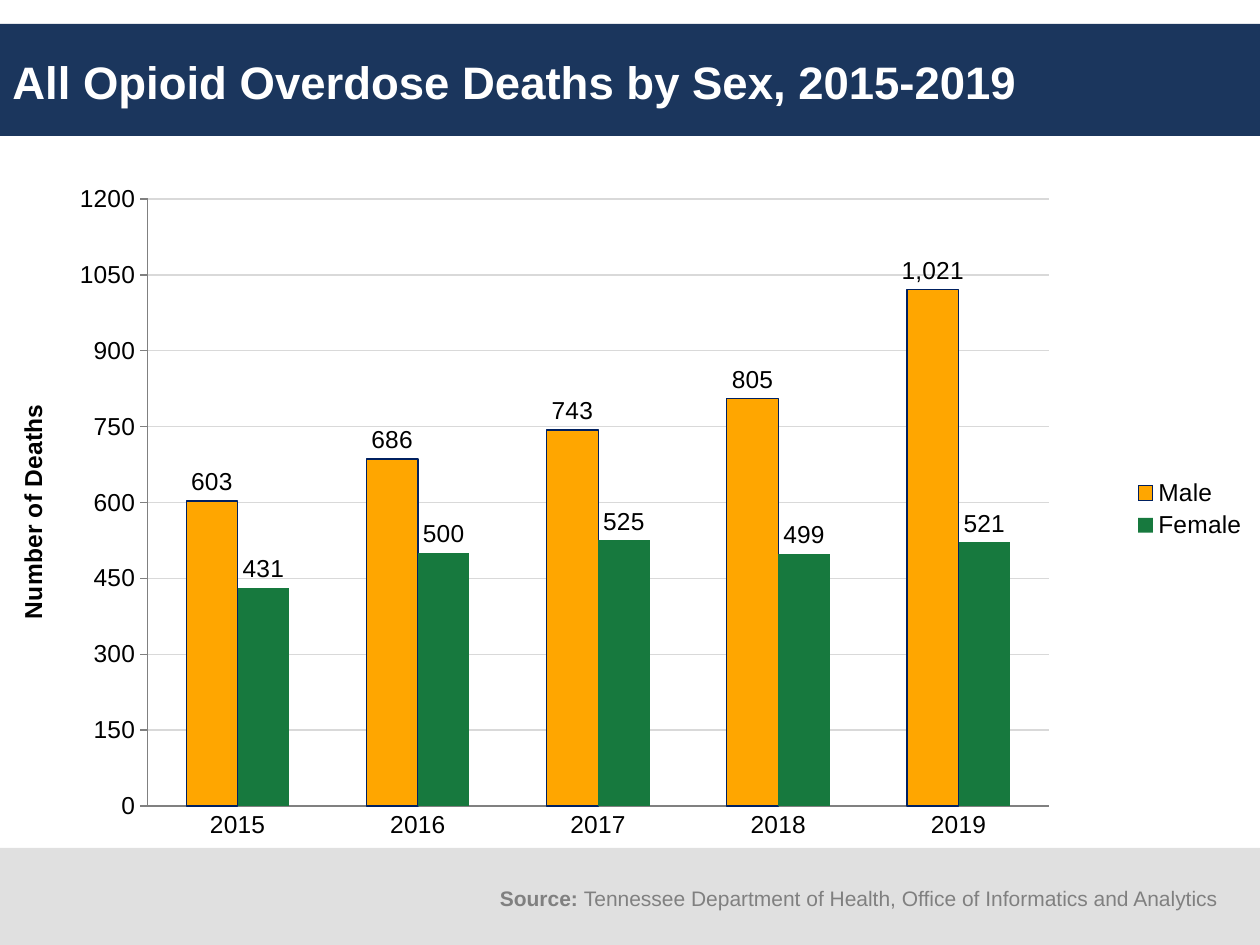
from dataclasses import dataclass

from lxml import etree
from pptx import Presentation
from pptx import util as u
from pptx.chart.data import CategoryChartData
from pptx.dml.color import RGBColor
from pptx.enum import chart as ch, shapes, text
from pptx.oxml.ns import qn


@dataclass(frozen=True)
class Theme:
    font: str = "Arial"
    navy: str = "1B365D"
    footer: str = "E0E0E0"
    white: str = "FFFFFF"
    black: str = "000000"
    muted: str = "808080"
    grid: str = "D9D9D9"
    male: str = "FFA600"
    male_outline: str = "002060"
    female: str = "17793E"
    title_size: int = 26
    chart_size: int = 14
    source_size: int = 12
    line_width: float = 0.75


class SlideBuilder:
    def __init__(self, slide, theme):
        self.slide = slide
        self.theme = theme

    def style(self, font, size, color, bold=False):
        font.name = self.theme.font
        font.size = u.Pt(size)
        font.bold = bold
        font.color.rgb = RGBColor.from_string(color)

    def outline(self, line, color):
        line.color.rgb = RGBColor.from_string(color)
        line.width = u.Pt(self.theme.line_width)

    def band(self, top, height, color):
        band = self.slide.shapes.add_shape(
            shapes.MSO_SHAPE.RECTANGLE, 0, u.Pt(top), u.Pt(720), u.Pt(height))
        band.shadow.inherit = False
        band.fill.solid()
        band.fill.fore_color.rgb = RGBColor.from_string(color)
        band.line.fill.background()

    def label(self, box, runs, size, color, anchor=text.MSO_ANCHOR.TOP):
        frame = self.slide.shapes.add_textbox(*map(u.Pt, box)).text_frame
        frame.word_wrap = True
        frame.vertical_anchor = anchor
        paragraph = frame.paragraphs[0]
        self.style(paragraph.font, size, color)
        for wording, bold in runs:
            run = paragraph.add_run()
            run.text = wording
            run.font.bold = bold

    def column_chart(self, box, years, series, axis_title, plot_box):
        theme = self.theme
        data = CategoryChartData()
        data.categories = years
        for name, deaths, *_ in series:
            data.add_series(name, deaths)
        chart = self.slide.shapes.add_chart(
            ch.XL_CHART_TYPE.COLUMN_CLUSTERED, *map(u.Pt, box), data).chart
        self.style(chart.font, theme.chart_size, theme.black)
        chart.has_title = False
        chart.has_legend = True
        chart.legend.position = ch.XL_LEGEND_POSITION.RIGHT
        chart.legend.include_in_layout = False
        self.style(chart.legend.font, theme.chart_size, theme.black)

        plot = chart.plots[0]
        plot.vary_by_categories = False
        plot.gap_width = 150
        plot.overlap = 0
        for columns, (_, _, color, border, number_format) in zip(plot.series, series):
            columns.format.fill.solid()
            columns.format.fill.fore_color.rgb = RGBColor.from_string(color)
            if border:
                self.outline(columns.format.line, border)
            else:
                columns.format.line.fill.background()
            labels = columns.data_labels
            labels.show_value = True
            labels.position = ch.XL_LABEL_POSITION.OUTSIDE_END
            labels.number_format = number_format
            labels.number_format_is_linked = False
            self.style(labels.font, theme.chart_size, theme.black)

        for axis in (chart.category_axis, chart.value_axis):
            self.style(axis.tick_labels.font, theme.chart_size, theme.black)
            self.outline(axis.format.line, theme.muted)
        chart.category_axis.major_tick_mark = ch.XL_TICK_MARK.NONE

        deaths_axis = chart.value_axis
        deaths_axis.major_tick_mark = ch.XL_TICK_MARK.OUTSIDE
        deaths_axis.minimum_scale = 0
        deaths_axis.maximum_scale = 1200
        deaths_axis.major_unit = 150
        self.outline(deaths_axis.major_gridlines.format.line, theme.grid)
        heading = deaths_axis.axis_title.text_frame
        heading.text = axis_title
        self.style(heading.paragraphs[0].font, theme.chart_size, theme.black, True)
        body = chart.element.find(f".//{qn('c:valAx')}/{qn('c:title')}//{qn('a:bodyPr')}")
        body.set("rot", "-5400000")
        body.set("vert", "horz")
        self.place_plot(chart, plot_box)

    def place_plot(self, chart, plot_box):
        area = chart.element.find(f".//{qn('c:plotArea')}")
        for old in area.findall(qn("c:layout")):
            area.remove(old)
        layout = etree.Element(qn("c:layout"))
        manual = etree.SubElement(layout, qn("c:manualLayout"))
        settings = [("layoutTarget", "inner"), ("xMode", "edge"), ("yMode", "edge")]
        settings += zip("xywh", map(str, plot_box))
        for tag, value in settings:
            etree.SubElement(manual, qn(f"c:{tag}")).set("val", value)
        area.insert(0, layout)


def main():
    deck = Presentation()
    deck.slide_width, deck.slide_height = u.Pt(720), u.Pt(540)
    theme = Theme()
    builder = SlideBuilder(deck.slides.add_slide(deck.slide_layouts[6]), theme)

    builder.band(13.7, 64, theme.navy)
    builder.band(484.5, 55.5, theme.footer)
    builder.label((0, 13.7, 720, 65), [("All Opioid Overdose Deaths by Sex, 2015-2019", True)],
                  theme.title_size, theme.white, text.MSO_ANCHOR.MIDDLE)
    builder.column_chart(
        (5.8, 95.8, 714.2, 390.2),
        ["2015", "2016", "2017", "2018", "2019"],
        [("Male", (603, 686, 743, 805, 1021), theme.male, theme.male_outline, "#,##0"),
         ("Female", (431, 500, 525, 499, 521), theme.female, None, "General")],
        "Number of Deaths",
        (0.11, 0.046, 0.721, 0.889))
    builder.label(
        (278.6, 502.6, 432, 21.6),
        [("Source: ", True),
         ("Tennessee Department of Health, Office of Informatics and Analytics", False)],
        theme.source_size, theme.muted)
    deck.save("out.pptx")


if __name__ == "__main__":
    main()
